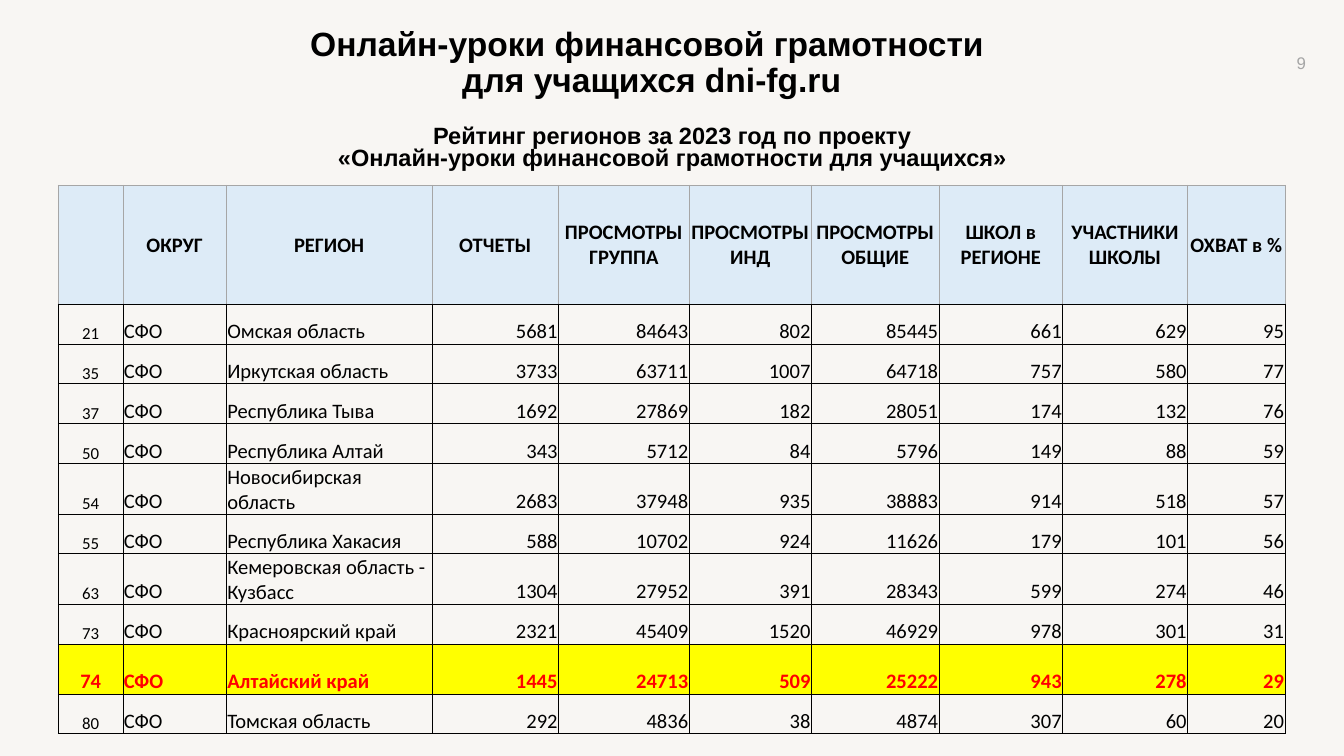
"""Build the slide with the 2023 regional ranking of online financial literacy lessons."""
from dataclasses import dataclass

import lxml.etree
import pptx
import pptx.dml.color
import pptx.enum.text
import pptx.oxml.ns
import pptx.util

Pt = pptx.util.Pt
RGBColor = pptx.dml.color.RGBColor
Align = pptx.enum.text.PP_ALIGN
Anchor = pptx.enum.text.MSO_ANCHOR

BACKGROUND = RGBColor(0xF8, 0xF6, 0xF3)
BLACK = RGBColor(0x00, 0x00, 0x00)
GRAY = RGBColor(0xA6, 0xA6, 0xA6)
HEADER_BLUE = RGBColor(0xDD, 0xEB, 0xF7)
YELLOW = RGBColor(0xFF, 0xFF, 0x00)
RED = RGBColor(0xFF, 0x00, 0x00)

DISTRICT = "СФО"
HIGHLIGHTED_REGION = "Алтайский край"
HEADER_HEIGHT, ROW_HEIGHT, HIGHLIGHTED_HEIGHT = 63.7, 21.4, 26.8
BORDER_WIDTH = 0.5


@dataclass(frozen=True)
class Column:
    title: str
    width: float
    align: Align = Align.RIGHT


@dataclass(frozen=True)
class Region:
    place: int
    name: str
    numbers: tuple[int, ...]

    @property
    def highlighted(self) -> bool:
        return self.name == HIGHLIGHTED_REGION

    @property
    def height(self) -> float:
        return HIGHLIGHTED_HEIGHT if self.highlighted else ROW_HEIGHT

    @property
    def values(self) -> tuple:
        return (self.place, DISTRICT, self.name, *self.numbers)


COLUMNS = (
    Column("", 34.6, Align.CENTER),
    Column("ОКРУГ", 55.4, Align.LEFT),
    Column("РЕГИОН", 110.2, Align.LEFT),
    Column("ОТЧЕТЫ", 67.8),
    Column("ПРОСМОТРЫ ГРУППА", 70),
    Column("ПРОСМОТРЫ ИНД", 65.5),
    Column("ПРОСМОТРЫ ОБЩИЕ", 68.4),
    Column("ШКОЛ в РЕГИОНЕ", 66.2),
    Column("УЧАСТНИКИ ШКОЛЫ", 66.9),
    Column("ОХВАТ в %", 52.2),
)

REGIONS = (
    Region(21, "Омская область", (5681, 84643, 802, 85445, 661, 629, 95)),
    Region(35, "Иркутская область", (3733, 63711, 1007, 64718, 757, 580, 77)),
    Region(37, "Республика Тыва", (1692, 27869, 182, 28051, 174, 132, 76)),
    Region(50, "Республика Алтай", (343, 5712, 84, 5796, 149, 88, 59)),
    Region(54, "Новосибирская область", (2683, 37948, 935, 38883, 914, 518, 57)),
    Region(55, "Республика Хакасия", (588, 10702, 924, 11626, 179, 101, 56)),
    Region(63, "Кемеровская область - Кузбасс", (1304, 27952, 391, 28343, 599, 274, 46)),
    Region(73, "Красноярский край", (2321, 45409, 1520, 46929, 978, 301, 31)),
    Region(74, HIGHLIGHTED_REGION, (1445, 24713, 509, 25222, 943, 278, 29)),
    Region(80, "Томская область", (292, 4836, 38, 4874, 307, 60, 20)),
)


def write_text(frame, text: str, *, size: float, font: str = "Arial", color: RGBColor = BLACK,
               bold: bool = False, align: Align = Align.CENTER, spacing: float = 1.0) -> None:
    """Fill a text frame, one paragraph per line of text."""
    frame.text = text
    for paragraph in frame.paragraphs:
        paragraph.alignment = align
        paragraph.line_spacing = spacing
        for run in paragraph.runs:
            run.font.name = font
            run.font.size = Pt(size)
            run.font.bold = bold
            run.font.color.rgb = color


def add_text(slide, text: str, left: float, top: float, width: float, height: float,
             **text_format) -> None:
    """Add a wrapped, vertically centred text box."""
    frame = slide.shapes.add_textbox(Pt(left), Pt(top), Pt(width), Pt(height)).text_frame
    frame.word_wrap = True
    frame.vertical_anchor = Anchor.MIDDLE
    frame.margin_left = frame.margin_right = Pt(5)
    frame.margin_top = frame.margin_bottom = Pt(3)
    write_text(frame, text, **text_format)


def set_borders(cell, **colors: RGBColor) -> None:
    """Draw the cell's L, R, T and B borders in the given colours."""
    properties = cell._tc.get_or_add_tcPr()
    qualified = pptx.oxml.ns.qn
    for side, color in colors.items():
        line = lxml.etree.SubElement(properties, qualified(f"a:ln{side}"), w=str(Pt(BORDER_WIDTH)))
        fill = lxml.etree.SubElement(line, qualified("a:solidFill"))
        lxml.etree.SubElement(fill, qualified("a:srgbClr"), val=str(color))


def fill_cell(cell, text: str, *, border: RGBColor, anchor: Anchor,
              fill: RGBColor | None, **text_format) -> None:
    """Set the text, borders, margins and fill of a table cell."""
    cell.margin_left = cell.margin_right = cell.margin_top = Pt(0.5)
    cell.margin_bottom = Pt(0)
    cell.vertical_anchor = anchor
    set_borders(cell, L=border, R=border, T=border, B=BLACK)
    if fill is None:
        cell.fill.background()
    else:
        cell.fill.solid()
        cell.fill.fore_color.rgb = fill
    write_text(cell.text_frame, text, font="Calibri", **text_format)


def add_ranking(slide, left: float, top: float) -> None:
    """Add the ranking table with its header and region rows."""
    heights = [HEADER_HEIGHT, *(region.height for region in REGIONS)]
    width = sum(column.width for column in COLUMNS)
    table = slide.shapes.add_table(len(heights), len(COLUMNS), Pt(left), Pt(top),
                                   Pt(width), Pt(sum(heights))).table
    table.first_row = table.horz_banding = False
    for row, height in zip(table.rows, heights):
        row.height = Pt(height)
    for index, column in enumerate(COLUMNS):
        table.columns[index].width = Pt(column.width)
        fill_cell(table.cell(0, index), column.title, border=GRAY, anchor=Anchor.MIDDLE,
                  fill=HEADER_BLUE, size=11, bold=True)
        for row_index, region in enumerate(REGIONS, start=1):
            marked = region.highlighted
            fill_cell(table.cell(row_index, index), str(region.values[index]), border=BLACK,
                      anchor=Anchor.BOTTOM, fill=YELLOW if marked else None,
                      size=9 if index == 0 and not marked else 11,
                      color=RED if marked else BLACK, bold=marked, align=column.align)


def main() -> None:
    """Create and save the presentation."""
    presentation = pptx.Presentation()
    presentation.slide_width, presentation.slide_height = Pt(720), Pt(405)
    slide = presentation.slides.add_slide(presentation.slide_layouts[6])
    slide.background.fill.solid()
    slide.background.fill.fore_color.rgb = BACKGROUND
    add_text(slide, "Онлайн-уроки финансовой грамотности \vдля учащихся dni-fg.ru",
             25.2, 17, 648, 34, size=18, bold=True, spacing=0.9)
    add_text(slide, "9", 670, 23, 34.6, 21.6, size=9, color=GRAY, align=Align.RIGHT)
    add_text(slide, "Рейтинг регионов за 2023 год по проекту\n"
                    "«Онлайн-уроки финансовой грамотности для учащихся»",
             0, 62.6, 720, 34, size=12.6, bold=True, spacing=0.8)
    add_ranking(slide, 31.3, 99.2)
    presentation.save("out.pptx")


if __name__ == "__main__":
    main()
